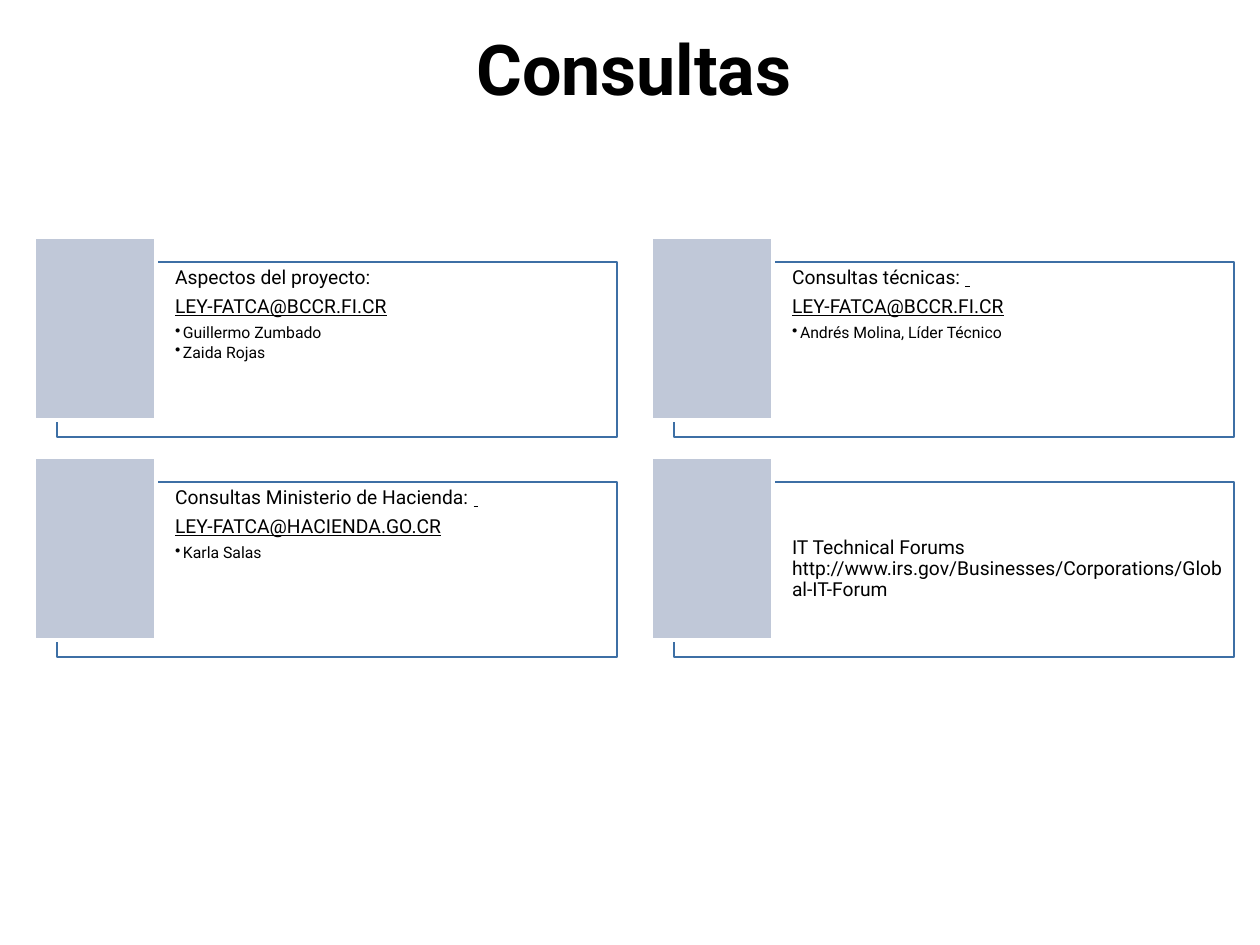
from lxml.etree import SubElement
from pptx import Presentation
from pptx.dml.color import RGBColor
from pptx.enum.shapes import MSO_SHAPE
from pptx.enum.text import MSO_ANCHOR, PP_ALIGN
from pptx.oxml.ns import qn
from pptx.util import Emu, Pt

SCALE = 914400 / 126


def px(num):
    return Emu(round(num * SCALE))


def paint(part, tone):
    part.rgb = RGBColor.from_string(tone)


deck = Presentation()
deck.slide_width, deck.slide_height = px(1260), px(945)
slide = deck.slides.add_slide(deck.slide_layouts[6])

title = slide.shapes.add_textbox(px(97), px(26), px(1074), px(90))
frame = title.text_frame
frame.word_wrap = True
frame.vertical_anchor = MSO_ANCHOR.BOTTOM
head = frame.paragraphs[0]
head.alignment = PP_ALIGN.CENTER
run = head.add_run()
run.text = "Consultas"
for key, val in {"name": "Roboto", "size": Pt(40), "bold": True}.items():
    setattr(run.font, key, val)
paint(run.font.color, "000000")

main = {"name": "Roboto", "size": Pt(11), "underline": False}
link = {**main, "underline": True}
item = {**main, "size": Pt(9)}
top, mid = MSO_ANCHOR.TOP, MSO_ANCHOR.MIDDLE
cards = [
    (top, [
        [("Aspectos del proyecto:", main)],
        [("LEY-FATCA@BCCR.FI.CR", link)],
        [("Guillermo Zumbado", item)],
        [("Zaida Rojas", item)],
    ]),
    (top, [
        [("Consultas técnicas: ", main), (" ", link)],
        [("LEY-FATCA@BCCR.FI.CR", link)],
        [("Andrés Molina, Líder Técnico", item)],
    ]),
    (top, [
        [("Consultas Ministerio de Hacienda: ", main), (" ", link)],
        [("LEY-FATCA@HACIENDA.GO.CR", link)],
        [("Karla Salas", item)],
    ]),
    (mid, [
        [("IT Technical Forums http://www.irs.gov/Businesses/Corporations/Global-IT-Forum", main)],
    ]),
]

for num, (anchor, lines) in enumerate(cards):
    row, col = divmod(num, 2)
    left, high = 34 + 617 * col, 237 + 220 * row
    card = slide.shapes.add_shape(
        MSO_SHAPE.RECTANGLE, px(left + 23), px(high + 25), px(560), px(175))
    tile = slide.shapes.add_shape(
        MSO_SHAPE.RECTANGLE, px(left), px(high), px(122), px(183))
    for shape, fill, edge, width in (
            (card, "FFFFFF", "3D6FA5", 0.75), (tile, "C0C8D8", "FFFFFF", 2)):
        shape.shadow.inherit = False
        shape.fill.solid()
        paint(shape.fill.fore_color, fill)
        paint(shape.line.color, edge)
        shape.line.width = Pt(width)
    tint = card.fill._xPr.find(qn("a:solidFill"))[0]
    SubElement(tint, qn("a:alpha"), val="40000")

    frame = card.text_frame
    style = {"word_wrap": True, "vertical_anchor": anchor, "margin_left": px(118),
             "margin_top": px(6), "margin_right": px(6), "margin_bottom": px(6)}
    for key, val in style.items():
        setattr(frame, key, val)
    for spot, runs in enumerate(lines):
        para = frame.add_paragraph() if spot else frame.paragraphs[0]
        point = runs[0][1] is item
        form = {"alignment": PP_ALIGN.LEFT, "line_spacing": 0.9,
                "space_after": Pt(1.4 if point else 4.4)}
        for key, val in form.items():
            setattr(para, key, val)
        if point:
            props = para._p.get_or_add_pPr()
            props.set("marL", str(px(8)))
            props.set("indent", str(px(-8)))
            SubElement(props, qn("a:buChar"), char="•")
        for text, look in runs:
            run = para.add_run()
            run.text = text
            for key, val in look.items():
                setattr(run.font, key, val)
            paint(run.font.color, "000000")

deck.save("out.pptx")
